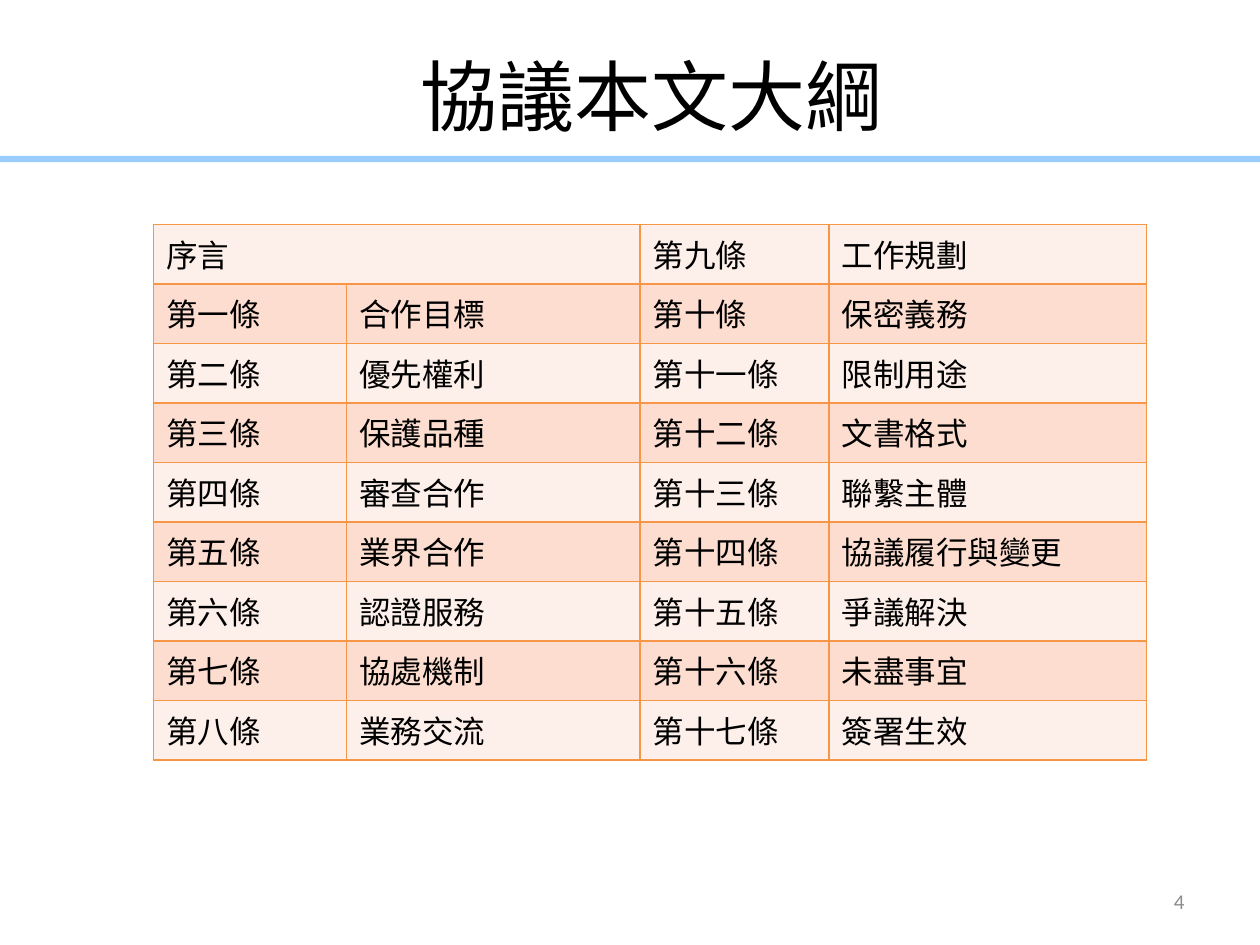
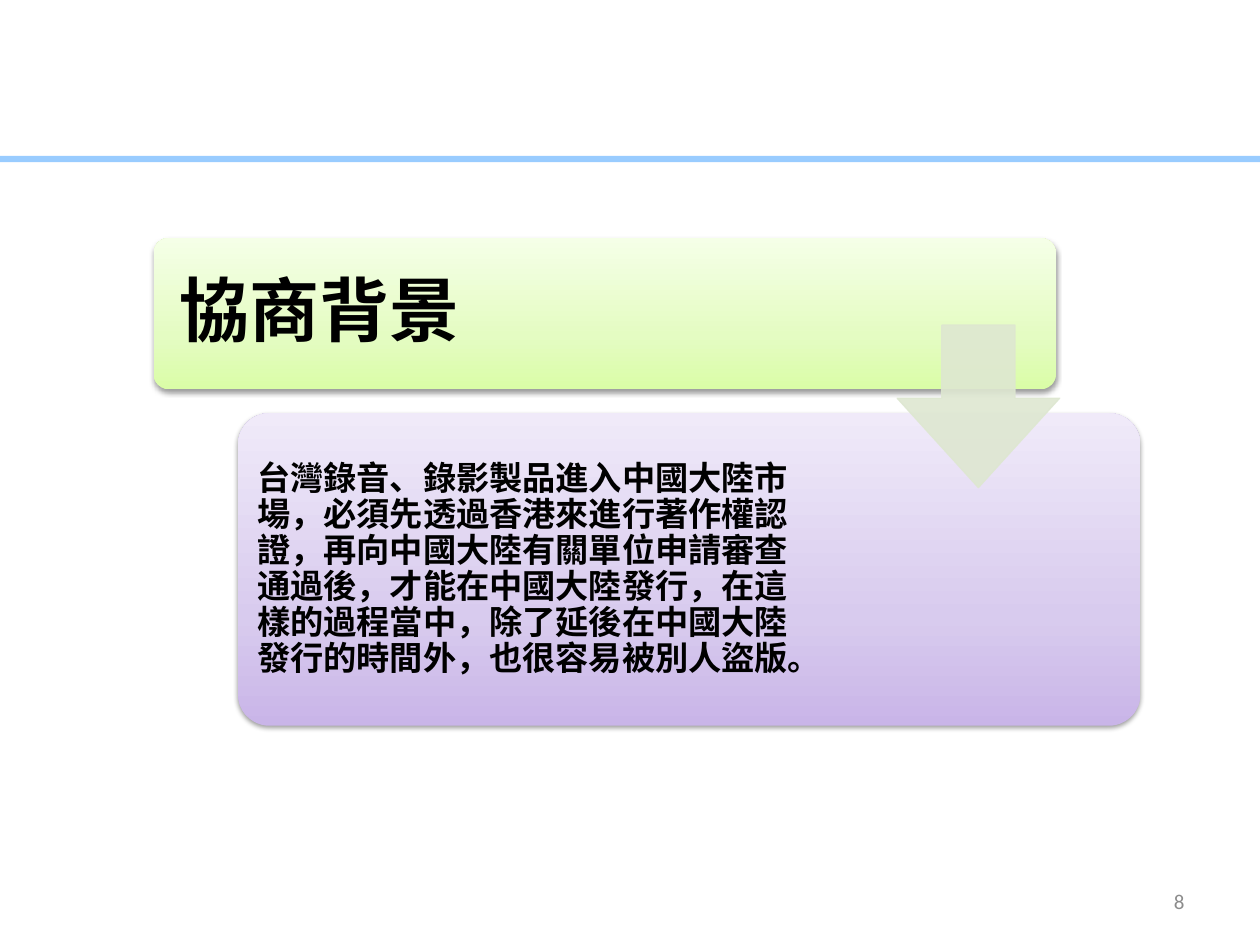
import math

import lxml.etree
import pptx
import pptx.dml.color
import pptx.enum.shapes
import pptx.enum.text
import pptx.oxml.ns
import pptx.util

SHAPES = pptx.enum.shapes.MSO_SHAPE
ALIGN = pptx.enum.text.PP_ALIGN
MIDDLE = pptx.enum.text.MSO_ANCHOR.MIDDLE
SLIDE_WIDTH = pptx.util.Inches(10)
SLIDE_HEIGHT = pptx.util.Inches(7.5)
CJK_FONT = "Noto Sans CJK SC"
BLACK = "000000"
BAND_BLUE = "99CCFF"
NUMBER_GREY = "8C8C8C"
BORDER_ORANGE = "F79646"
ROW_FILLS = ("FDEFE9", "FCDDCF")
ARROW_GREEN = "DEE7D1"
GREEN_STOPS = ((0, "DAFDA7"), (35, "E4FCC2"), (100, "F5FFE7"))
PURPLE_STOPS = ((0, "C9B5E8"), (35, "D8CBEE"), (100, "F0EAF9"))
CORNER = 0.1

LEFT_ARTICLES = (
    ("序言", ""), ("第一條", "合作目標"), ("第二條", "優先權利"),
    ("第三條", "保護品種"), ("第四條", "審查合作"), ("第五條", "業界合作"),
    ("第六條", "認證服務"), ("第七條", "協處機制"), ("第八條", "業務交流"),
)
RIGHT_ARTICLES = (
    ("第九條", "工作規劃"), ("第十條", "保密義務"), ("第十一條", "限制用途"),
    ("第十二條", "文書格式"), ("第十三條", "聯繫主體"),
    ("第十四條", "協議履行與變更"), ("第十五條", "爭議解決"),
    ("第十六條", "未盡事宜"), ("第十七條", "簽署生效"),
)
COLUMN_SHARES = (15.3, 23.3, 15, 25.2)
BACKGROUND = (
    "台灣錄音、錄影製品進入中國大陸市場，必須先透過香港來進行著作權認證，"
    "再向中國大陸有關單位申請審查通過後，才能在中國大陸發行，"
    "在這樣的過程當中，除了延後在中國大陸發行的時間外，也很容易被別人盜版。"
)


def across(percent):
    return int(SLIDE_WIDTH * percent / 100)


def down(percent):
    return int(SLIDE_HEIGHT * percent / 100)


def place(x, y, width, height):
    return across(x), down(y), across(width), down(height)


def color(hex_value):
    return pptx.dml.color.RGBColor.from_string(hex_value)


def add_node(parent, tag, **attributes):
    node = lxml.etree.SubElement(parent, pptx.oxml.ns.qn(tag))
    for key, value in attributes.items():
        node.set(key, str(value))
    return node


def write(frame, text, size, font=CJK_FONT, ink=BLACK, bold=False, align=ALIGN.LEFT):
    paragraph = frame.paragraphs[0]
    paragraph.text = text
    paragraph.alignment = align
    paragraph.font.size = pptx.util.Pt(size)
    paragraph.font.bold = bold
    paragraph.font.name = font
    paragraph.font.color.rgb = color(ink)
    properties = paragraph._p.pPr.find(pptx.oxml.ns.qn("a:defRPr"))
    add_node(properties, "a:ea", typeface=font)
    return paragraph


def add_label(slide, box, text, size, inset=None, **style):
    frame = slide.shapes.add_textbox(*box).text_frame
    frame.word_wrap = True
    frame.vertical_anchor = MIDDLE
    if inset is not None:
        margin = pptx.util.Inches(inset)
        frame.margin_left = frame.margin_right = margin
        frame.margin_top = frame.margin_bottom = margin
    return write(frame, text, size, **style)


def add_flat_shape(slide, kind, box, fill):
    shape = slide.shapes.add_shape(kind, *box)
    shape.shadow.inherit = False
    shape.fill.solid()
    shape.fill.fore_color.rgb = color(fill)
    shape.line.fill.background()
    return shape


def add_page(deck, number):
    slide = deck.slides.add_slide(deck.slide_layouts[6])
    add_flat_shape(slide, SHAPES.RECTANGLE, place(0, 16.5, 100, 0.67), BAND_BLUE)
    add_label(slide, place(71.7, 92.67, 23.3, 5.33), number, 12,
              font="Calibri", ink=NUMBER_GREY, align=ALIGN.RIGHT)
    return slide


def set_borders(cell):
    properties = cell._tc.get_or_add_tcPr()
    for index, side in enumerate(("a:lnL", "a:lnR", "a:lnT", "a:lnB")):
        border = add_node(properties, side, w=pptx.util.Pt(1))
        add_node(add_node(border, "a:solidFill"), "a:srgbClr", val=BORDER_ORANGE)
        properties.insert(index, border)


def add_outline_table(slide):
    rows = [left + right for left, right in zip(LEFT_ARTICLES, RIGHT_ARTICLES)]
    box = place(12.2, 23.73, sum(COLUMN_SHARES), 56.7)
    table = slide.shapes.add_table(len(rows), len(COLUMN_SHARES), *box).table
    table.first_row = table.horz_banding = False
    for column, share in zip(table.columns, COLUMN_SHARES):
        column.width = across(share)
    for row_index, row in enumerate(rows):
        for column_index, text in enumerate(row):
            cell = table.cell(row_index, column_index)
            cell.fill.solid()
            cell.fill.fore_color.rgb = color(ROW_FILLS[row_index % 2])
            set_borders(cell)
            if text:
                write(cell.text_frame, text, 18)
    table.cell(0, 0).merge(table.cell(0, 1))


def set_gradient(shape, stops):
    shape.fill.gradient()
    shape.fill.gradient_angle = 90
    stop_list = shape._element.spPr.find(".//" + pptx.oxml.ns.qn("a:gsLst"))
    for old_stop in list(stop_list):
        stop_list.remove(old_stop)
    for position, hex_value in stops:
        stop = add_node(stop_list, "a:gs", pos=position * 1000)
        add_node(stop, "a:srgbClr", val=hex_value)


def set_soft_shadow(shape):
    effects = shape._element.spPr.find(pptx.oxml.ns.qn("a:effectLst"))
    shadow = add_node(effects, "a:outerShdw", blurRad=pptx.util.Pt(3.1),
                      dist=pptx.util.Pt(1.6), dir=5400000, rotWithShape=0)
    add_node(add_node(shadow, "a:srgbClr", val=BLACK), "a:alpha", val=38000)


def add_card(slide, box, stops, text, size, text_share, inset):
    card = add_flat_shape(slide, SHAPES.ROUNDED_RECTANGLE, box, stops[0][1])
    card.adjustments[0] = CORNER
    set_gradient(card, stops)
    set_soft_shadow(card)
    left, top, width, height = box
    gap = int(height * CORNER * (1 - math.sqrt(0.5)))
    text_box = left + gap, top + gap, int(width * text_share), height - 2 * gap
    paragraph = add_label(slide, text_box, text, size, inset, bold=True)
    paragraph.line_spacing = 0.9


def add_step_arrow(slide, box):
    arrow = add_flat_shape(slide, SHAPES.DOWN_ARROW, box, ARROW_GREEN)
    arrow.adjustments[0] = 0.45
    arrow.adjustments[1] = 0.55
    arrow.line.color.rgb = color(ARROW_GREEN)
    arrow.line.width = pptx.util.Pt(0.75)
    for ink in arrow._element.spPr.iter(pptx.oxml.ns.qn("a:srgbClr")):
        add_node(ink, "a:alpha", val=90000)


def build_outline(deck):
    slide = add_page(deck, "4")
    add_label(slide, place(6.7, 3.87, 90, 12.27), "協議本文大綱", 44, align=ALIGN.CENTER)
    add_outline_table(slide)


def build_background(deck):
    slide = add_page(deck, "8")
    add_card(slide, place(12.2, 25.2, 71.6, 16), GREEN_STOPS, "協商背景", 40, 0.72, 0.17)
    add_card(slide, place(18.9, 43.73, 71.6, 33.07), PURPLE_STOPS, BACKGROUND, 19, 0.62, 0.08)
    add_step_arrow(slide, place(71.2, 34.4, 12.9, 17.2))


def main():
    deck = pptx.Presentation()
    deck.slide_width = SLIDE_WIDTH
    deck.slide_height = SLIDE_HEIGHT
    build_outline(deck)
    build_background(deck)
    deck.save("out.pptx")


if __name__ == "__main__":
    main()
